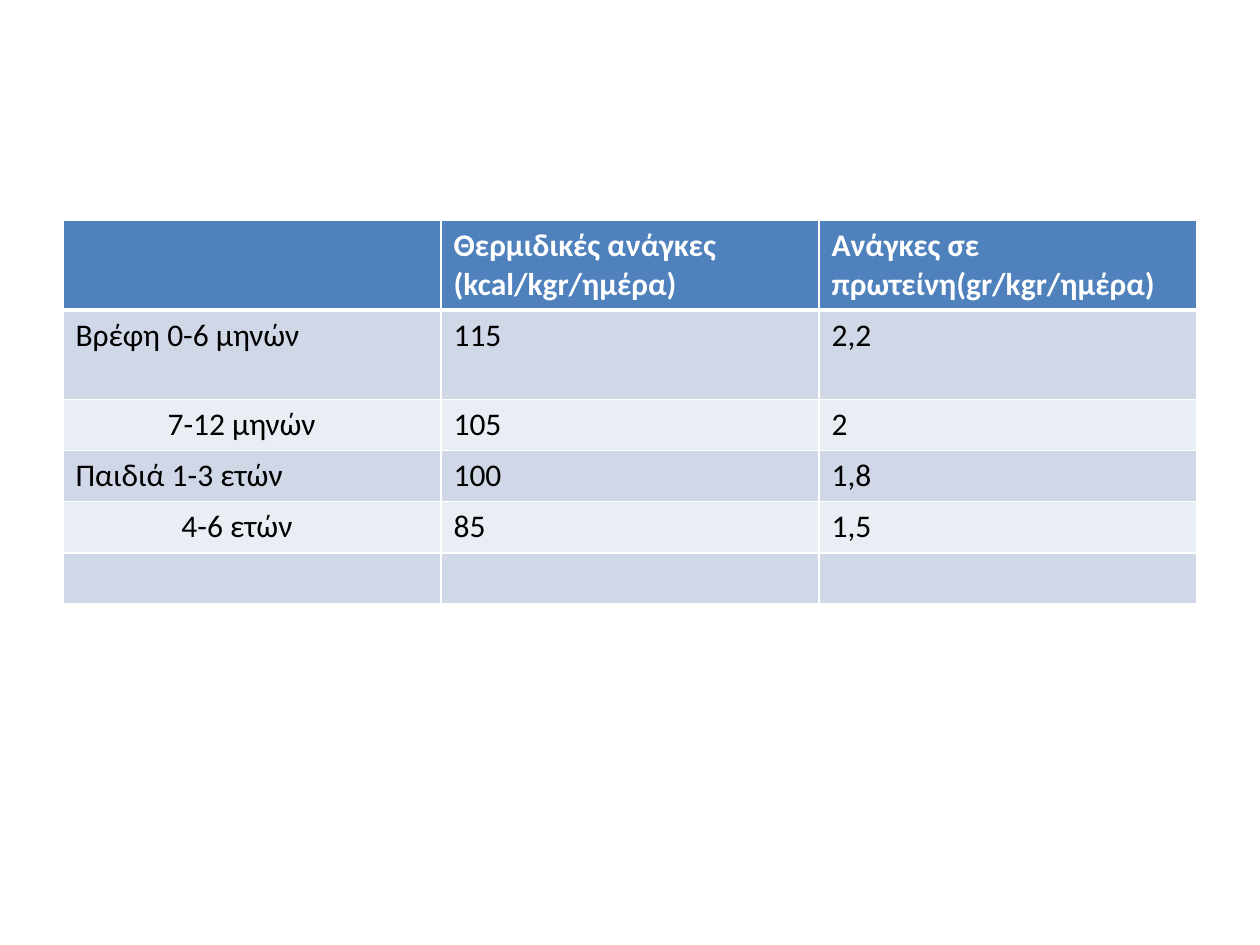
from pptx import Presentation
from pptx.dml.color import RGBColor
from pptx.oxml import parse_xml
from pptx.oxml.ns import nsdecls
from pptx.util import Inches, Pt

BLANK_LAYOUT = 6
COLORS = {
    "header": "4F81BD",
    "band_dark": "D0D8E8",
    "band_light": "E9EDF4",
    "white": "FFFFFF",
    "black": "000000",
}
# Each cell is its text; the first column also has a left indent in inches.
HEADERS = ["", "Θερμιδικές ανάγκες (kcal/kgr/ημέρα)", "Ανάγκες σε πρωτείνη(gr/kgr/ημέρα)"]
NEEDS = [
    ["Βρέφη 0-6 μηνών", "115", "2,2"],
    ["7-12 μηνών", "105", "2"],
    ["Παιδιά 1-3 ετών", "100", "1,8"],
    ["4-6 ετών", "85", "1,5"],
    ["", "", ""],
]
AGE_INDENTS = {"7-12 μηνών": 0.73, "4-6 ετών": 0.84}
ROW_HEIGHTS = [0.7, 0.71, 0.4, 0.4, 0.4, 0.4]


class SlideBuilder:
    """Holds the text style and the current slide."""

    def __init__(self, slide, font="Calibri", size=18):
        self.slide = slide
        self.font = font
        self.size = size

    def add_table(self, rows, left, top, width, row_heights):
        shape = self.slide.shapes.add_table(
            len(rows), len(rows[0]), Inches(left), Inches(top),
            Inches(width), Inches(sum(row_heights)))
        table = shape.table
        table.first_row = True
        table.horz_banding = False
        for row, height in zip(table.rows, row_heights):
            row.height = Inches(height)
        for row_index, texts in enumerate(rows):
            for column_index, text in enumerate(texts):
                self.style_cell(table.cell(row_index, column_index), text, row_index)

    def style_cell(self, cell, text, row_index):
        is_header = row_index == 0
        band = "band_dark" if row_index % 2 else "band_light"
        self.add_borders(cell, top=3 if row_index == 1 else 1, bottom=3 if is_header else 1)
        cell.fill.solid()
        cell.fill.fore_color.rgb = RGBColor.from_string(COLORS["header" if is_header else band])
        if text:
            self.add_text(cell, text, "white" if is_header else "black", is_header)

    def add_text(self, cell, text, color, bold):
        paragraph = cell.text_frame.paragraphs[0]
        if text in AGE_INDENTS:
            paragraph._p.get_or_add_pPr().set("marL", str(Inches(AGE_INDENTS[text])))
        run = paragraph.add_run()
        run.text = text
        run.font.name = self.font
        run.font.size = Pt(self.size)
        run.font.bold = bold
        run.font.color.rgb = RGBColor.from_string(COLORS[color])

    def add_borders(self, cell, top, bottom):
        properties = cell._tc.get_or_add_tcPr()
        for side, points in (("L", 1), ("R", 1), ("T", top), ("B", bottom)):
            properties.append(parse_xml(
                f'<a:ln{side} {nsdecls("a")} w="{Pt(points)}"><a:solidFill>'
                f'<a:srgbClr val="{COLORS["white"]}"/></a:solidFill></a:ln{side}>'))


def main():
    presentation = Presentation()
    presentation.slide_width = Inches(10)
    presentation.slide_height = Inches(7.5)
    slide = presentation.slides.add_slide(presentation.slide_layouts[BLANK_LAYOUT])
    builder = SlideBuilder(slide)
    builder.add_table([HEADERS] + NEEDS, 0.5, 1.75, 9, ROW_HEIGHTS)
    presentation.save("out.pptx")


if __name__ == "__main__":
    main()
